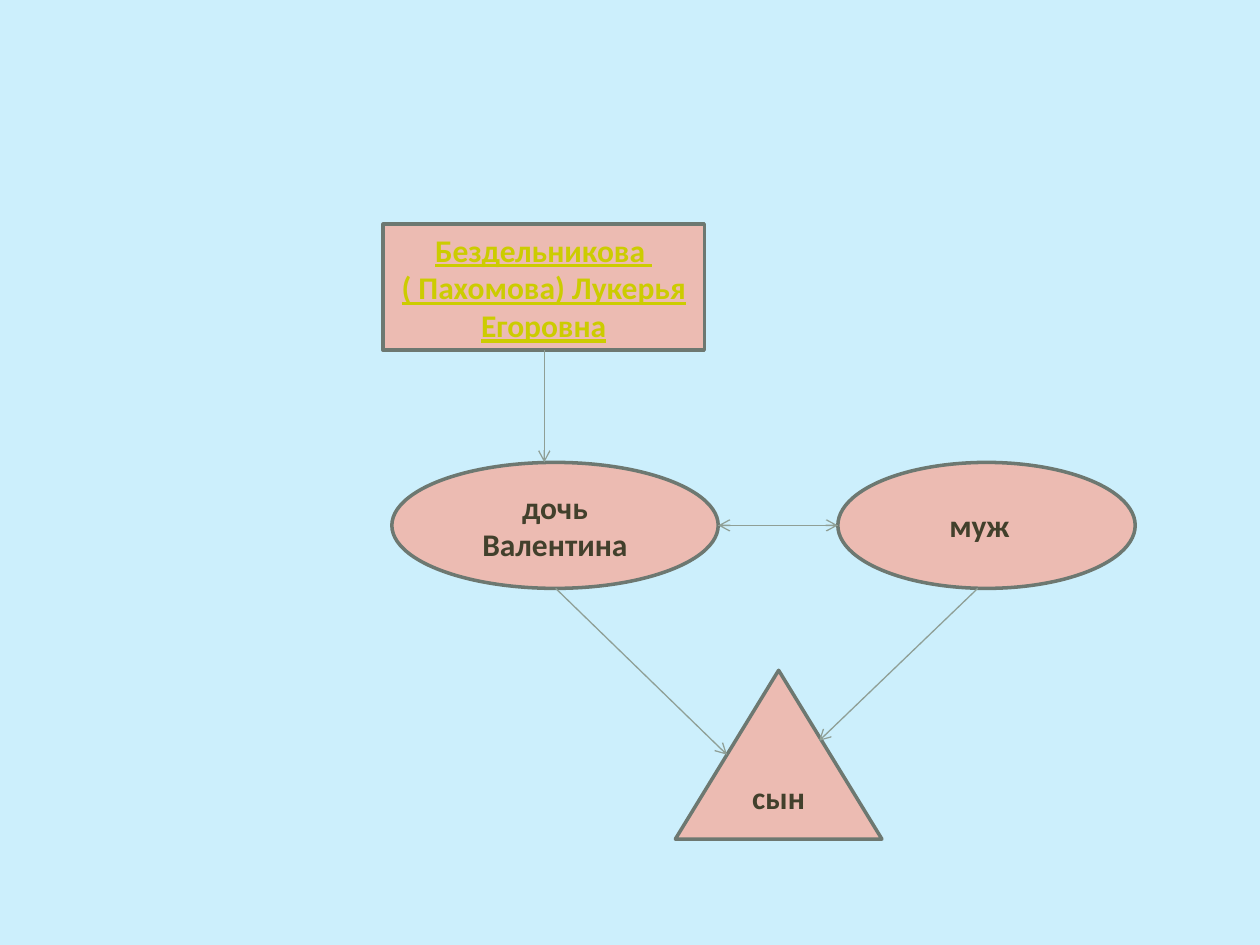
import pptx
import pptx.dml.color
import pptx.enum.shapes
import pptx.enum.text
import pptx.oxml.ns
import pptx.util
import lxml.etree

FORMS = pptx.enum.shapes.MSO_SHAPE
COLUMNS, ROWS = 100, 75


def colour(code):
    """Turn a hex string into a colour."""
    return pptx.dml.color.RGBColor.from_string(code)


class FamilyTree:
    """Holds the style and the slide, and draws relatives and their ties."""

    font, size = "Calibri", 18
    sky, fill, outline = "CCEFFC", "ECBBB2", "6D7871"
    ink, highlight, tie_colour = "42402C", "CCCC00", "8F9F96"

    def __init__(self, deck):
        """Add a blank slide with the sky background."""
        self.column = deck.slide_width / COLUMNS
        self.row = deck.slide_height / ROWS
        self.slide = deck.slides.add_slide(deck.slide_layouts[6])
        self.slide.background.fill.solid()
        self.slide.background.fill.fore_color.rgb = colour(self.sky)

    def place(self, across, down):
        """Convert columns and rows to lengths."""
        return round(across * self.column), round(down * self.row)

    def relative(self, form, corner, extent, lines, highlighted=False, right_inset=0.1):
        """Draw a family member as a labelled shape."""
        member = self.slide.shapes.add_shape(form, *self.place(*corner), *self.place(*extent))
        member.shadow.inherit = False
        member.fill.solid()
        member.fill.fore_color.rgb = colour(self.fill)
        member.line.color.rgb = colour(self.outline)
        member.line.width = pptx.util.Pt(2)
        label = member.text_frame
        label.word_wrap = True
        label.margin_right = pptx.util.Inches(right_inset)
        label.vertical_anchor = pptx.enum.text.MSO_ANCHOR.MIDDLE
        label.text = "\n".join(lines)
        for paragraph in label.paragraphs:
            paragraph.alignment = pptx.enum.text.PP_ALIGN.CENTER
            paragraph.font.name = self.font
            paragraph.font.size = pptx.util.Pt(self.size)
            paragraph.font.bold = True
            paragraph.font.underline = highlighted
            paragraph.font.color.rgb = colour(self.highlight if highlighted else self.ink)

    def tie(self, start, end):
        """Draw an arrow from one relative to another."""
        arrow = self.slide.shapes.add_connector(
            pptx.enum.shapes.MSO_CONNECTOR.STRAIGHT, *self.place(*start), *self.place(*end))
        arrow.line.color.rgb = colour(self.tie_colour)
        arrow.line.width = pptx.util.Pt(0.75)
        qn = pptx.oxml.ns.qn
        lxml.etree.SubElement(arrow.line._get_or_add_ln(), qn("a:tailEnd"), type="arrow")
        lxml.etree.SubElement(arrow._element.spPr, qn("a:effectLst"))


def main():
    """Build the family tree and save it."""
    deck = pptx.Presentation()
    deck.slide_width, deck.slide_height = pptx.util.Inches(10), pptx.util.Inches(7.5)
    tree = FamilyTree(deck)
    tree.relative(FORMS.RECTANGLE, (30.4, 17.8), (25.5, 10),
                  ["Бездельникова ", "( Пахомова) Лукерья Егоровна"], highlighted=True)
    tree.relative(FORMS.OVAL, (31.1, 36.7), (25.9, 10), ["дочь Валентина"])
    tree.relative(FORMS.OVAL, (66.5, 36.7), (23.6, 10), ["муж"], right_inset=0.21)
    tree.relative(FORMS.ISOSCELES_TRIANGLE, (53.6, 53.2), (16.4, 13.4), ["сын"])

    daughter_side, husband_side = (57, 41.7), (66.5, 41.7)
    for start, end in (
        ((43.2, 27.8), (43.2, 36.7)),
        (daughter_side, husband_side),
        (husband_side, daughter_side),
        ((44.1, 46.7), (57.7, 59.9)),
        ((77.6, 46.7), (65, 58.8)),
    ):
        tree.tie(start, end)
    deck.save("out.pptx")


if __name__ == "__main__":
    main()
